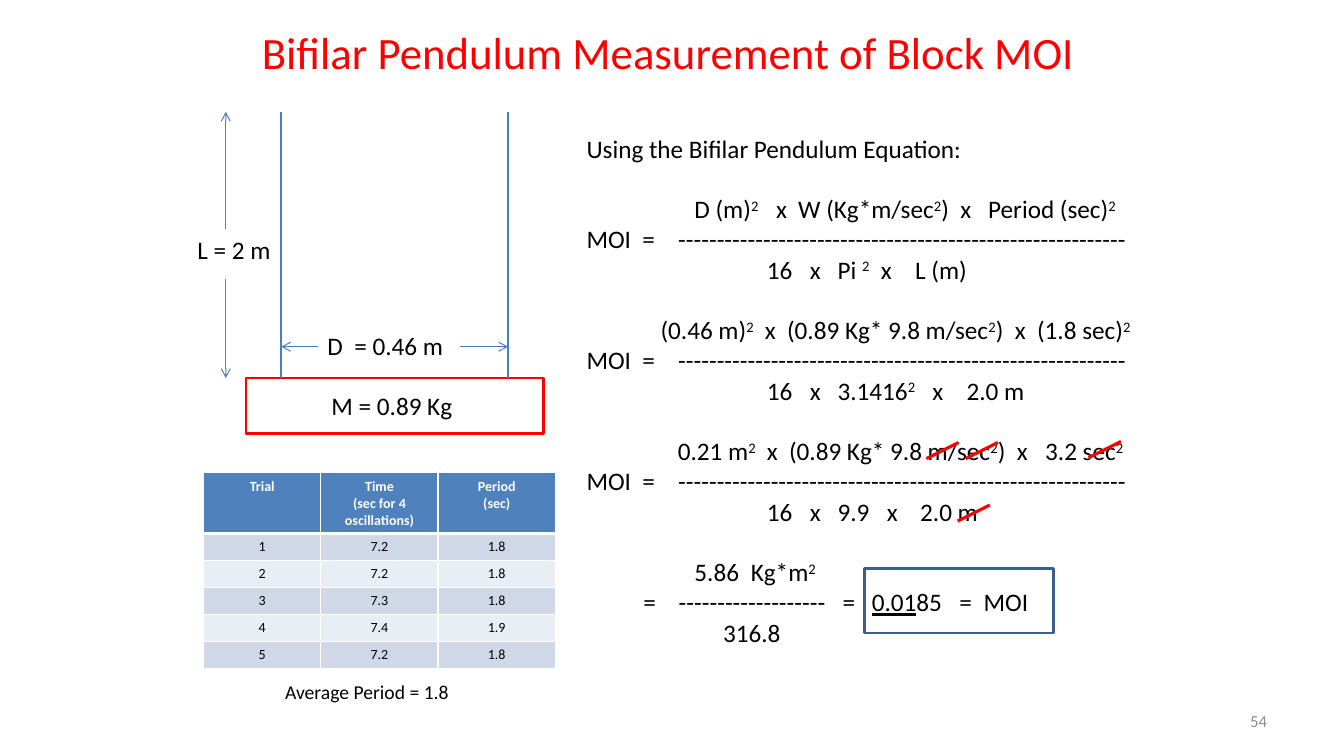
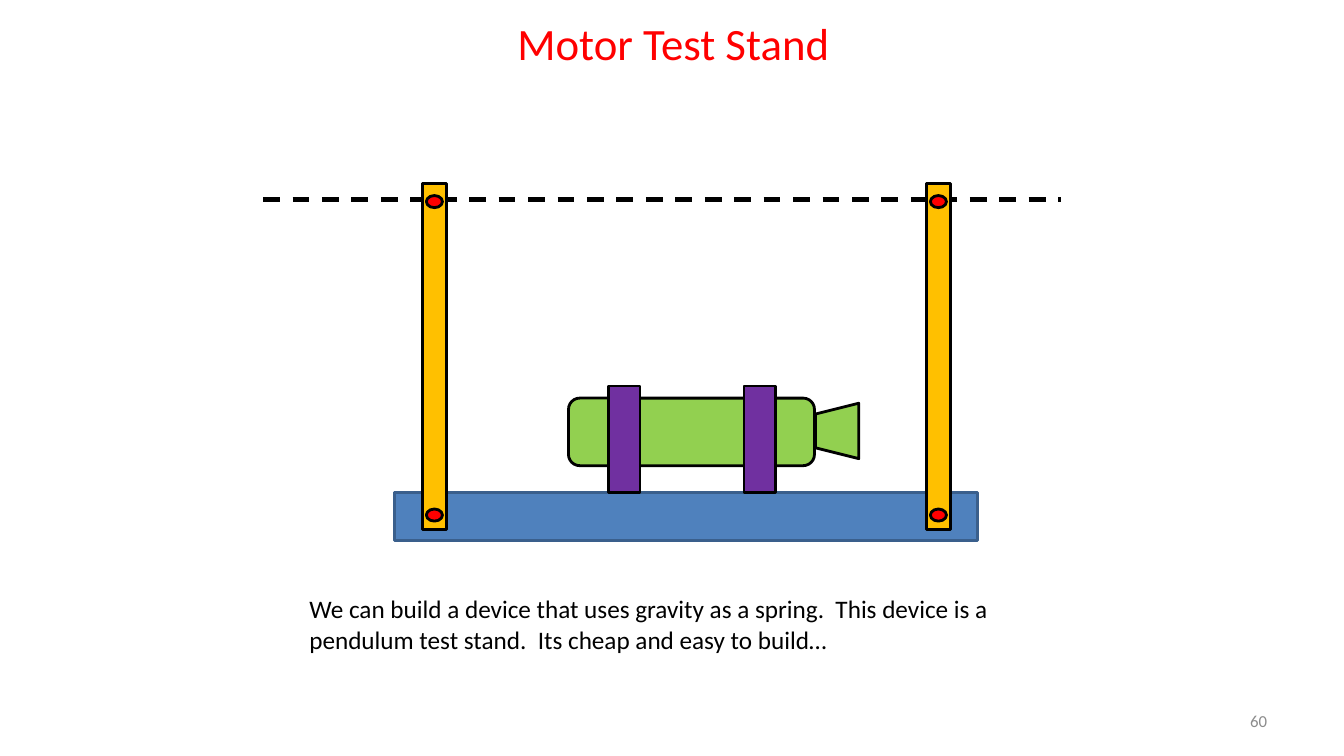
from dataclasses import dataclass

from lxml import etree
from pptx import Presentation
from pptx import util as u
from pptx.dml.color import RGBColor
from pptx.enum import dml, shapes, text
from pptx.oxml import ns

CELL = 0.1
COLUMNS, ROWS = 133.33, 75


@dataclass(frozen=True)
class Theme:
    font: str = "Calibri"
    title_size: float = 32
    body_size: float = 18
    note_size: float = 14
    number_size: float = 12
    table_size: float = 10
    line_gap: float = 21.6
    ink: str = "000000"
    paper: str = "FFFFFF"
    accent: str = "FF0000"
    muted: str = "8C8C8C"
    wire: str = "4B7EBC"
    blue: str = "4F81BD"
    blue_edge: str = "3A5F8C"
    band_dark: str = "D0D8E8"
    band_light: str = "E9EDF4"
    green: str = "92D050"
    purple: str = "7030A0"
    amber: str = "FFC000"


THEME = Theme()
ALIGN = text.PP_ALIGN
ANCHOR = text.MSO_ANCHOR
SHAPE = shapes.MSO_SHAPE


def cells(*lengths):
    return [u.Inches(length * CELL) for length in lengths]


def apply(target, values):
    for key, value in values.items():
        setattr(target, key, value)


def child(parent, tag, **attributes):
    return etree.SubElement(parent, ns.qn(tag), attributes)


class Deck:
    def __init__(self, theme):
        self.theme = theme
        self.file = Presentation()
        width, height = cells(COLUMNS, ROWS)
        apply(self.file, {"slide_width": width, "slide_height": height})

    def slide(self, title, number, title_box):
        blank = self.file.slide_layouts[6]
        self.page = self.file.slides.add_slide(blank).shapes
        self.canvas = self.page
        t = self.theme
        self.text(title_box, title, size=t.title_size, color=t.accent,
                  align=ALIGN.CENTER, anchor=ANCHOR.MIDDLE)
        self.text((95.6, 69.5, 31.1, 4), number, size=t.number_size,
                  color=t.muted, align=ALIGN.RIGHT, anchor=ANCHOR.MIDDLE)

    def group(self):
        self.canvas = self.page.add_group_shape().shapes

    def style(self, font, size=None, color=None, bold=False):
        t = self.theme
        apply(font, {"name": t.font, "size": u.Pt(size or t.body_size), "bold": bold})
        font.color.rgb = RGBColor.from_string(color or t.ink)

    def frame(self, box, anchor=ANCHOR.TOP):
        frame = self.page.add_textbox(*cells(*box)).text_frame
        apply(frame, {"word_wrap": True, "vertical_anchor": anchor})
        return frame

    def text(self, box, words, size=None, color=None, align=ALIGN.LEFT, anchor=ANCHOR.TOP):
        paragraph = self.frame(box, anchor).paragraphs[0]
        apply(paragraph, {"text": words, "alignment": align})
        self.style(paragraph.runs[0].font, size, color)

    def equations(self, box, blocks):
        frame = self.frame(box)
        for block_index, block in enumerate(blocks):
            for row_index, row in enumerate(block):
                first = block_index == row_index == 0
                paragraph = frame.paragraphs[0] if first else frame.add_paragraph()
                if block_index and not row_index:
                    paragraph.space_before = u.Pt(self.theme.line_gap)
                self.tabbed(paragraph, row)

    def tabbed(self, paragraph, row):
        stops = child(paragraph._p.get_or_add_pPr(), "a:tabLst")
        for column, words in row:
            if column:
                child(stops, "a:tab", pos=str(cells(column)[0]), algn="l")
                self.style(self.run(paragraph, "\t").font)
            for raised_index, part in enumerate(words.split("^")):
                for lined_index, piece in enumerate(part.split("_")):
                    if piece:
                        run = self.run(paragraph, piece)
                        self.style(run.font)
                        run.font.underline = lined_index % 2 == 1
                        if raised_index % 2:
                            run._r.get_or_add_rPr().set("baseline", "30000")

    def run(self, paragraph, words):
        run = paragraph.add_run()
        run.text = words
        return run

    def shape(self, kind, box, fill=None, edge=None, rotation=0):
        shape = self.canvas.add_shape(kind, *cells(*box))
        shape.shadow.inherit = False
        shape.rotation = rotation
        if fill:
            shape.fill.solid()
            shape.fill.fore_color.rgb = RGBColor.from_string(fill)
        else:
            shape.fill.background()
        shape.line.color.rgb = RGBColor.from_string(edge or self.theme.ink)
        shape.line.width = u.Pt(2)

    def line(self, start, end, color, width, arrow=False, dashed=False):
        line = self.page.add_connector(shapes.MSO_CONNECTOR.STRAIGHT, *cells(*start, *end))
        line.line.color.rgb = RGBColor.from_string(color)
        line.line.width = u.Pt(width)
        if dashed:
            line.line.dash_style = dml.MSO_LINE.DASH
        if arrow:
            child(line.line._get_or_add_ln(), "a:tailEnd", type="arrow")
        child(line._element.spPr, "a:effectLst")

    def borders(self, cell, **widths):
        properties = cell._tc.get_or_add_tcPr()
        for side in "LRTB":
            edge = child(properties, "a:ln" + side, w=str(u.Pt(widths.get(side, 1))))
            child(child(edge, "a:solidFill"), "a:srgbClr", val=self.theme.paper)

    def table(self, box, records, header_height, row_height):
        t = self.theme
        table = self.page.add_table(len(records), len(records[0]), *cells(*box)).table
        for row_index, record in enumerate(records):
            header = row_index == 0
            height = header_height if header else row_height
            table.rows[row_index].height = cells(height)[0]
            fill = t.blue if header else (t.band_light, t.band_dark)[row_index % 2]
            heavy = {0: {"B": 3}, 1: {"T": 3}}.get(row_index, {})
            for column_index, words in enumerate(record):
                cell = table.cell(row_index, column_index)
                self.borders(cell, **heavy)
                cell.fill.solid()
                cell.fill.fore_color.rgb = RGBColor.from_string(fill)
                cell.text = words
                for paragraph in cell.text_frame.paragraphs:
                    paragraph.alignment = ALIGN.CENTER
                    self.style(paragraph.runs[0].font, t.table_size,
                               t.paper if header else t.ink, header)


def pendulum_slide(deck):
    t = deck.theme
    deck.slide("Bifilar Pendulum Measurement of Block MOI", "54", (21.3, 1.7, 90, 6.9))

    left_wire, right_wire, ceiling, block_top = 27.9, 50.4, 11.1, 37.5
    deck.shape(SHAPE.RECTANGLE, (24.4, block_top, 29.5, 5.5), edge=t.accent)
    for wire in (left_wire, right_wire):
        deck.line((wire, ceiling), (wire, block_top), t.wire, 1.5)
    for box, label in (
        ((18.6, 22.8, 11.5, 4), "L = 2 m"),
        ((31.5, 32.3, 14.2, 4), "D  = 0.46 m"),
        ((31.9, 38.2, 17.3, 4), "M = 0.89 Kg"),
    ):
        deck.text(box, label)
    height_column, spacing_row = 22.4, 34.4
    for start, end in (
        ((45.6, spacing_row), (right_wire, spacing_row)),
        ((31.5, spacing_row), (left_wire, spacing_row)),
        ((height_column, 22.7), (height_column, ceiling)),
        ((height_column, 27.7), (height_column, block_top)),
    ):
        deck.line(start, end, t.wire, 0.75, arrow=True)

    times = ("7.2", "7.2", "7.3", "7.4", "7.2")
    periods = ("1.8", "1.8", "1.8", "1.9", "1.8")
    trials = [(str(trial), *values) for trial, values in enumerate(zip(times, periods), 1)]
    header = ("Trial", "Time\n(sec for 4 oscillations)", "Period\n(sec)")
    deck.table((20.2, 46.9, 34.9, 19.3), [header, *trials], 6, 2.66)
    deck.text((27.3, 67, 22, 3.4), "Average Period = 1.8", size=t.note_size)

    fraction_bar = [(0, "MOI"), (5.55, "="), (9.1, "-" * 58)]
    weight = "(0.89 Kg* 9.8 m/sec^2^)"
    divisor = [(17.9, "16"), (22.15, "x")]
    deck.equations((57.2, 12.7, 57.1, 52.5), [
        [[(0, "Using the Bifilar Pendulum Equation:")]],
        [
            [(10.7, "D (m)^2^"), (18.8, "x"), (21, "W (Kg*m/sec^2^)"),
             (37.1, "x"), (39.85, "Period (sec)^2^")],
            fraction_bar,
            divisor + [(24.9, "Pi ^2^"), (29.2, "x"), (32.6, "L (m)")],
        ],
        [
            [(7.35, "(0.46 m)^2^"), (17.7, "x"), (19.9, weight),
             (42.5, "x"), (44.7, "(1.8 sec)^2^")],
            fraction_bar,
            divisor + [(24.9, "3.1416^2^"), (34.3, "x"), (37.7, "2.0 m")],
        ],
        [
            [(9.05, "0.21 m^2^"), (17.9, "x"), (20.1, weight),
             (42.7, "x"), (45.5, "3.2 sec^2^")],
            fraction_bar,
            divisor + [(24.9, "9.9"), (29.8, "x"), (33.1, "2.0 m")],
        ],
        [
            [(10.7, "5.86"), (16.3, "Kg*m^2^")],
            [(5.65, "="), (9.15, "-" * 19), (25.4, "="), (28.3, "_0.01_85"),
             (37, "="), (39.4, "MOI")],
            [(13.55, "316.8")],
        ],
    ])
    for column, row in ((108, 45.4), (95.8, 45.5), (95, 51.7), (91.9, 45.5)):
        deck.line((column, row), (column + 3.2, row - 1.6), t.accent, 2.25)
    deck.shape(SHAPE.RECTANGLE, (85.8, 56.4, 18.7, 6.4), edge=t.blue_edge)


def test_stand_slide(deck):
    t = deck.theme
    deck.slide("Motor Test Stand", "60", (21.8, 0.9, 90, 6.7))
    deck.line((26.1, 19.8), (105.3, 19.8), t.ink, 3, dashed=True)

    deck.group()
    deck.shape(SHAPE.RECTANGLE, (39.1, 48.9, 57.9, 4.7), t.blue, t.blue_edge)
    deck.shape(SHAPE.ROUNDED_RECTANGLE, (56.4, 39.5, 24.4, 6.7), t.green)
    deck.shape(SHAPE.TRAPEZOID, (80.3, 40.6, 5.5, 4.3), t.green, rotation=270)
    for strap in (60.4, 73.8):
        deck.shape(SHAPE.RECTANGLE, (strap, 38.3, 3.1, 10.6), t.purple)

    for arm in (41.9, 91.9):
        deck.group()
        deck.shape(SHAPE.RECTANGLE, (arm, 18.2, 2.4, 34.3), t.amber)
        for pivot in (19.4, 50.5):
            deck.shape(SHAPE.OVAL, (arm + 0.4, pivot, 1.6, 1.2), t.accent)

    deck.text((29.7, 58.4, 79.5, 7.1),
              "We can build a device that uses gravity as a spring.  This device is a "
              "pendulum test stand.  Its cheap and easy to build…")


def main():
    deck = Deck(THEME)
    pendulum_slide(deck)
    test_stand_slide(deck)
    deck.file.save("out.pptx")


if __name__ == "__main__":
    main()
